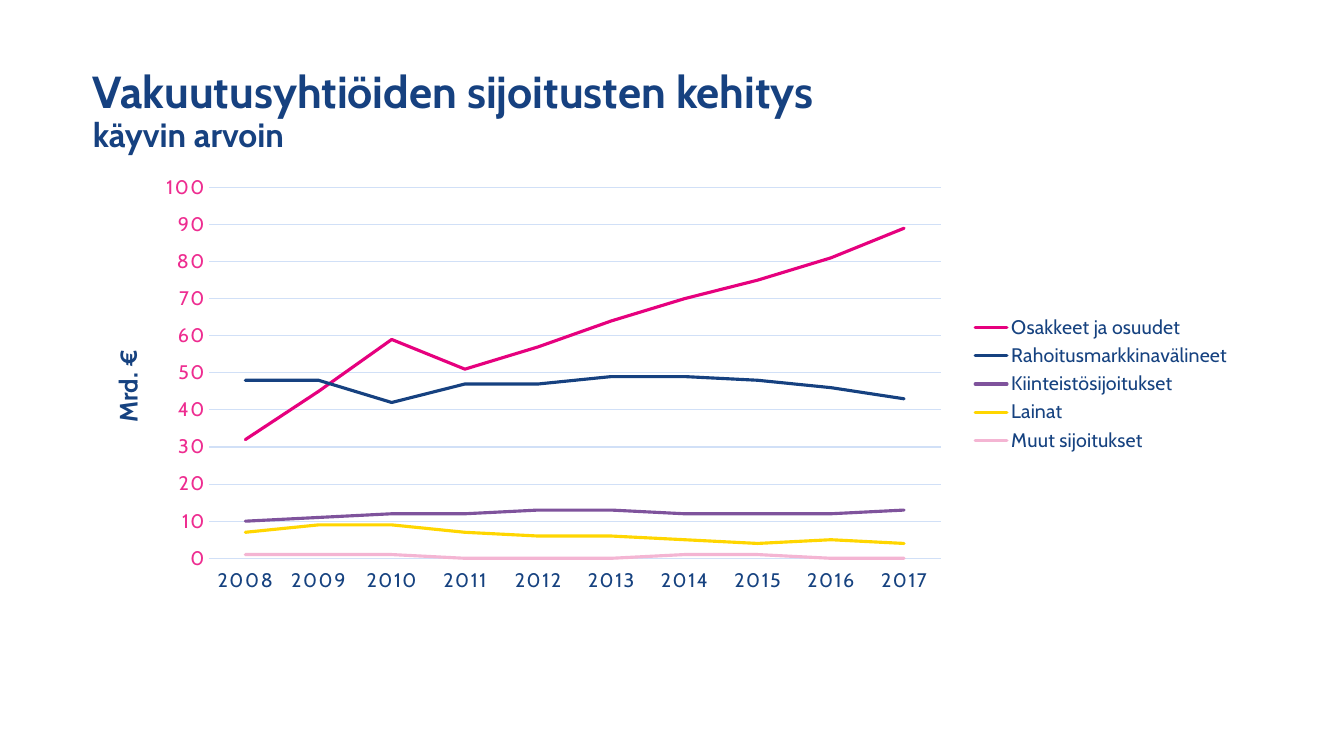
from dataclasses import dataclass

from lxml import etree
from pptx import Presentation
from pptx import util as u
from pptx.chart.data import CategoryChartData
from pptx.dml.color import RGBColor
from pptx.enum import chart as charts, text
from pptx.oxml.ns import qn


@dataclass(frozen=True)
class Theme:
    font: str = "Cabin"
    heading: str = "164180"
    label: str = "164280"
    value: str = "EE2C90"
    grid: str = "D1E0F7"
    title_size: int = 32
    subtitle_size: int = 24
    axis_title_size: int = 18
    label_size: int = 14
    grid_width: float = 0.75
    series_width: float = 2.25


THEME = Theme()

YEARS = [str(year) for year in range(2008, 2018)]
INVESTMENTS = [
    ("Osakkeet ja osuudet", "E6007E", (32, 45, 59, 51, 57, 64, 70, 75, 81, 89)),
    ("Rahoitusmarkkinavälineet", "164180", (48, 48, 42, 47, 47, 49, 49, 48, 46, 43)),
    ("Kiinteistösijoitukset", "7F539C", (10, 11, 12, 12, 13, 13, 12, 12, 12, 13)),
    ("Lainat", "FFD600", (7, 9, 9, 7, 6, 6, 5, 4, 5, 4)),
    ("Muut sijoitukset", "F4B5D3", (1, 1, 1, 0, 0, 0, 1, 1, 0, 0)),
]


def style_font(font, size, color, bold=False):
    font.name = THEME.font
    font.size = u.Pt(size)
    font.bold = bold
    font.color.rgb = RGBColor.from_string(color)


def write(paragraph, words, *, size, color, bold=False):
    run = paragraph.add_run()
    run.text = words
    style_font(run.font, size, color, bold)


def style_line(line, color, width):
    line.color.rgb = RGBColor.from_string(color)
    line.width = u.Pt(width)


def place(parent, index, **settings):
    """Give a chart part a manual layout, kept as the child at index."""
    layout = parent.find(qn("c:layout"))
    if layout is not None:
        parent.remove(layout)
    layout = parent.makeelement(qn("c:layout"))
    parent.insert(index, layout)
    manual = etree.SubElement(layout, qn("c:manualLayout"))
    for name, value in settings.items():
        etree.SubElement(manual, qn(f"c:{name}")).set("val", str(value))


class SlideBuilder:
    def __init__(self, slide, theme):
        self.slide = slide
        self.theme = theme

    def title(self, heading, subheading, box):
        t = self.theme
        holder = self.slide.shapes.title
        holder.left, holder.top, holder.width, holder.height = map(u.Inches, box)
        frame = holder.text_frame
        frame.word_wrap = True
        frame.auto_size = text.MSO_AUTO_SIZE.NONE
        frame.vertical_anchor = text.MSO_ANCHOR.MIDDLE
        paragraph = frame.paragraphs[0]
        paragraph.alignment = text.PP_ALIGN.LEFT
        paragraph.line_spacing = 0.9
        write(paragraph, heading, size=t.title_size, color=t.heading, bold=True)
        paragraph.add_line_break()
        write(paragraph, subheading, size=t.subtitle_size, color=t.heading, bold=True)

    def line_chart(self, categories, rows, unit, box, plot_box):
        t = self.theme
        data = CategoryChartData(number_format="0")
        data.categories = categories
        for name, _, values in rows:
            data.add_series(name, values)
        chart = self.slide.shapes.add_chart(
            charts.XL_CHART_TYPE.LINE, *map(u.Inches, box), data).chart
        chart.has_title = False
        style_font(chart.font, t.label_size, t.label)

        # Series lines
        for series, (_, color, _) in zip(chart.plots[0].series, rows):
            series.smooth = False
            series.marker.style = charts.XL_MARKER_STYLE.NONE
            style_line(series.format.line, color, t.series_width)
            series._element.spPr.find(qn("a:ln")).set("cap", "rnd")

        # Legend
        chart.has_legend = True
        chart.legend.position = charts.XL_LEGEND_POSITION.RIGHT
        chart.legend.include_in_layout = False
        style_font(chart.legend.font, t.label_size, t.label)

        # Axes
        years, amounts = chart.category_axis, chart.value_axis
        for axis, color in ((years, t.label), (amounts, t.value)):
            axis.major_tick_mark = axis.minor_tick_mark = charts.XL_TICK_MARK.NONE
            style_font(axis.tick_labels.font, t.label_size, color)
            for properties in axis._element.iter(qn("a:defRPr")):
                properties.set("spc", "100")
        years.tick_label_position = charts.XL_TICK_LABEL_POSITION.LOW
        style_line(years.format.line, t.grid, t.grid_width)
        amounts.minimum_scale, amounts.maximum_scale = 0, 100
        amounts.major_unit = 10
        amounts.tick_labels.number_format = "0"
        amounts.tick_labels.number_format_is_linked = False
        amounts.format.line.fill.background()
        amounts.has_major_gridlines = True
        style_line(amounts.major_gridlines.format.line, t.grid, t.grid_width)

        # Axis title
        caption = amounts.axis_title
        write(caption.text_frame.paragraphs[0], unit,
              size=t.axis_title_size, color=t.label, bold=True)
        body = caption.text_frame._txBody.find(qn("a:bodyPr"))
        body.set("rot", "-5400000")
        body.set("vert", "horz")
        place(caption._element, 1, xMode="edge", yMode="edge", x=0.02, y=0.41)

        # Plot area
        left, top, width, height = box
        plot_left, plot_top, plot_width, plot_height = plot_box
        place(chart._chartSpace.chart.plotArea, 0,
              layoutTarget="inner", xMode="edge", yMode="edge",
              x=(plot_left - left) / width, y=(plot_top - top) / height,
              w=plot_width / width, h=plot_height / height)


def main():
    deck = Presentation()
    deck.slide_width, deck.slide_height = u.Inches(13.33), u.Inches(7.5)
    slide = deck.slides.add_slide(deck.slide_layouts[5])
    builder = SlideBuilder(slide, THEME)
    builder.title("Vakuutusyhtiöiden sijoitusten kehitys", "käyvin arvoin",
                  (0.82, 0.39, 11.5, 1.45))
    builder.line_chart(YEARS, INVESTMENTS, "Mrd. €", (0.82, 1.66, 11.5, 4.3),
                       plot_box=(2.07, 1.86, 7.26, 3.68))
    deck.save("out.pptx")


if __name__ == "__main__":
    main()
